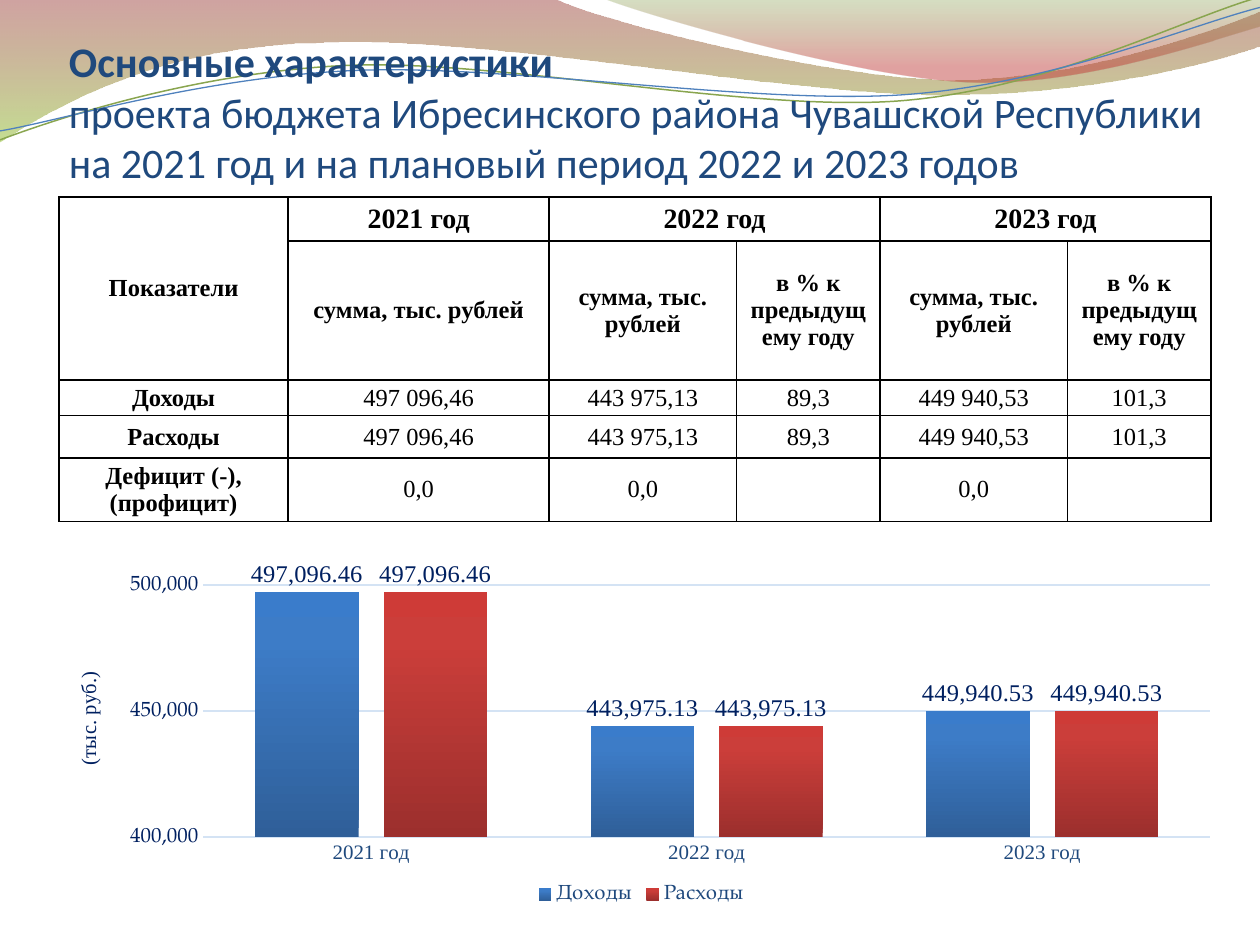
from dataclasses import dataclass

from lxml import etree
from pptx import Presentation
from pptx.chart.data import CategoryChartData
from pptx.dml.color import RGBColor
from pptx.enum.chart import XL_CHART_TYPE, XL_LABEL_POSITION, XL_LEGEND_POSITION, XL_TICK_MARK
from pptx.enum.text import MSO_ANCHOR, PP_ALIGN
from pptx.oxml import parse_xml
from pptx.oxml.ns import nsdecls, qn
from pptx.util import Cm, Pt

COLUMNS = XL_CHART_TYPE.COLUMN_CLUSTERED
LABELS_ABOVE = XL_LABEL_POSITION.OUTSIDE_END
LEGEND_BELOW = XL_LEGEND_POSITION.BOTTOM
NO_TICKS = XL_TICK_MARK.NONE
MIDDLE, BOTTOM = MSO_ANCHOR.MIDDLE, MSO_ANCHOR.BOTTOM
CENTER = PP_ALIGN.CENTER

SERIF, PAGELLA, SANS = "Times New Roman", "TeX Gyre Pagella", "Calibri"
BLUE, NAVY, BLACK, GRID = "1F497D", "002060", "000000", "D4E3F4"


@dataclass
class Gradient:
    """Stops are (position %, colour, opacity %); the angle runs clockwise."""
    stops: list[tuple[int, str, int]]
    angle: int


@dataclass
class Wave:
    """Steps of two numbers are straight lines, steps of six are Bezier curves, in cm."""
    start: tuple[float, float]
    steps: list[tuple[float, ...]]
    fill: Gradient | None = None
    line: tuple[str, float] | None = None
    rotation: float = 0


@dataclass
class Series:
    name: str
    values: list[float]
    fill: Gradient


WAVES = [
    Wave((0, -0.03), [(11.18, -0.03), (12.09, 0.43, 16.87, 1.6, 19.25, 1.6),
                      (21.67, 1.6, 24.33, 0.66, 25.4, 0.23), (25.43, 0.91),
                      (24.97, 1.12, 22.1, 1.93, 18.95, 1.91),
                      (15.8, 1.91, 9.7, 0.71, 6.53, 0.86),
                      (3.28, 0.89, 1.17, 2.11, -0.03, 2.87), (0, -0.03)],
         fill=Gradient([(0, "973330", 45), (100, "95C238", 55)], 90)),
    Wave((12.17, -0.03), [(12.93, 0.28, 17.32, 1.57, 19.53, 1.65),
                          (21.74, 1.75, 24.41, 0.81, 25.4, 0.53), (25.4, 0),
                          (12.17, -0.03)],
         fill=Gradient([(0, "769537", 30), (80, "BE3330", 45)], 90)),
    Wave((-0.05, 2.22), [(1.19, 1.82, 4.02, 1.04, 7.05, 1.05),
                         (10.05, 1.07, 15.02, 2.37, 18.08, 2.29),
                         (21.13, 2.2, 23.87, 0.91, 25.41, 0.55)],
         line=("89A54F", 0.85), rotation=-2.7),
    Wave((-0.04, 2.04), [(1.16, 1.9, 4.1, 1.14, 7.2, 1.16),
                         (10.25, 1.18, 15.13, 2.23, 18.18, 2.17),
                         (21.21, 2.1, 23.93, 1.06, 25.45, 0.75)],
         line=("4F81BD", 0.75), rotation=-2.7),
]

YEARS = ["2021 год", "2022 год", "2023 год"]
AMOUNT, SHARE = "сумма, тыс. рублей", "в % к предыдущему году"
FIGURES = ["497 096,46", "443 975,13", "89,3", "449 940,53", "101,3"]
ROWS = [
    ["Показатели", YEARS[0], YEARS[1], "", YEARS[2], ""],
    ["", AMOUNT, AMOUNT, SHARE, AMOUNT, SHARE],
    ["Доходы", *FIGURES],
    ["Расходы", *FIGURES],
    ["Дефицит (-), (профицит)", "0,0", "0,0", "", "0,0", ""],
]
COLUMN_WIDTHS = [4.62, 5.26, 3.78, 2.89, 3.78, 2.89]
ROW_HEIGHTS = [0.89, 2.8, 0.72, 0.85, 1.28]
MERGES = [((0, 0), (1, 0)), ((0, 2), (0, 3)), ((0, 4), (0, 5))]

TOTALS = [497096.46, 443975.13, 449940.53]
SERIES = [
    Series("Доходы", TOTALS, Gradient(
        [(0, "2F5F99", 100), (80, "3D7CC7", 100), (100, "3A7CCB", 100)], 270)),
    Series("Расходы", TOTALS, Gradient(
        [(0, "9C2F2D", 100), (80, "CB3E3A", 100), (100, "CE3B37", 100)], 270)),
]


def color(value: str) -> RGBColor:
    return RGBColor.from_string(value)


def set_font(font, name: str, size: float, value: str, bold: bool = False) -> None:
    font.name, font.size, font.bold = name, Pt(size), bold
    font.color.rgb = color(value)


def set_line(line, value: str, width: float) -> None:
    line.color.rgb = color(value)
    line.width = Pt(width)


def set_gradient(fill, element, gradient: Gradient) -> None:
    """Replace the default stops, which cannot be added or made translucent publicly."""
    fill.gradient()
    node = element.find(".//" + qn("a:gradFill"))
    for child in list(node):
        node.remove(child)
    stops = etree.SubElement(node, qn("a:gsLst"))
    for position, value, opacity in gradient.stops:
        stop = etree.SubElement(stops, qn("a:gs"), pos=str(position * 1000))
        tint = etree.SubElement(stop, qn("a:srgbClr"), val=value)
        if opacity < 100:
            etree.SubElement(tint, qn("a:alpha"), val=str(opacity * 1000))
    etree.SubElement(node, qn("a:lin"), ang=str(gradient.angle * 60000), scaled="0")


def bend_segments(shape, wave: Wave) -> None:
    """Turn the straight segments of six-number steps into Bezier curves."""
    segments = list(shape._element.iter(qn("a:lnTo")))
    for segment, step in zip(segments, wave.steps):
        if len(step) == 2:
            continue
        curve = etree.Element(qn("a:cubicBezTo"))
        for x, y in (step[:2], step[2:4]):
            etree.SubElement(curve, qn("a:pt"), x=str(Cm(x) - shape.left),
                             y=str(Cm(y) - shape.top))
        curve.append(segment[0])
        segment.getparent().replace(segment, curve)


def draw_wave(page, wave: Wave) -> None:
    x, y = wave.start
    builder = page.shapes.build_freeform(Cm(x), Cm(y))
    ends = [(Cm(step[-2]), Cm(step[-1])) for step in wave.steps]
    builder.add_line_segments(ends, close=wave.fill is not None)
    shape = builder.convert_to_shape()
    bend_segments(shape, wave)
    shape.rotation = wave.rotation
    shape.shadow.inherit = False
    if wave.fill:
        set_gradient(shape.fill, shape._element, wave.fill)
    else:
        shape.fill.background()
    if wave.line:
        set_line(shape.line, *wave.line)
    else:
        shape.line.fill.background()


def draw_title(page) -> None:
    box = page.shapes.add_textbox(Cm(1.39), Cm(0.59), Cm(22.86), Cm(3.18))
    frame = box.text_frame
    frame.word_wrap, frame.vertical_anchor = True, BOTTOM
    frame.margin_left = frame.margin_right = frame.margin_bottom = 0
    para = frame.paragraphs[0]
    set_font(para.font, SANS, 24, BLUE)
    heading = para.add_run()
    heading.text = "Основные характеристики"
    heading.font.bold = True
    para.add_line_break()
    para.add_run().text = ("проекта бюджета Ибресинского района Чувашской Республики "
                           "на 2021 год и на плановый период 2022 и 2023 годов")


def set_borders(cell) -> None:
    properties = cell._tc.get_or_add_tcPr()
    for index, side in enumerate(("lnL", "lnR", "lnT", "lnB")):
        properties.insert(index, parse_xml(
            f'<a:{side} {nsdecls("a")} w="12700"><a:solidFill>'
            f'<a:srgbClr val="{BLACK}"/></a:solidFill></a:{side}>'))


def draw_table(page) -> None:
    table = page.shapes.add_table(len(ROWS), len(COLUMN_WIDTHS), Cm(1.19), Cm(3.97),
                                  Cm(sum(COLUMN_WIDTHS)), Cm(sum(ROW_HEIGHTS))).table
    table.first_row = table.horz_banding = False
    for column, width in zip(table.columns, COLUMN_WIDTHS):
        column.width = Cm(width)
    for row, height in zip(table.rows, ROW_HEIGHTS):
        row.height = Cm(height)
    for first, last in MERGES:
        table.cell(*first).merge(table.cell(*last))
    for i, texts in enumerate(ROWS):
        for j, text in enumerate(texts):
            cell = table.cell(i, j)
            cell.fill.background()
            set_borders(cell)
            cell.vertical_anchor = MIDDLE
            cell.margin_left = cell.margin_right = Cm(0.18)
            cell.margin_top = cell.margin_bottom = 0
            cell.text = text
            para = cell.text_frame.paragraphs[0]
            para.alignment = CENTER
            set_font(para.font, SERIF, 16 if i == 0 and j else 14, BLACK, i < 2 or j == 0)


def draw_chart(page) -> None:
    data = CategoryChartData()
    data.categories = YEARS
    for series in SERIES:
        data.add_series(series.name, series.values)
    chart = page.shapes.add_chart(COLUMNS, Cm(0.99), Cm(11.3), Cm(23.88), Cm(7.04), data).chart
    set_font(chart.font, PAGELLA, 10, BLACK)
    chart.has_title = False
    chart.has_legend = True
    chart.legend.position, chart.legend.include_in_layout = LEGEND_BELOW, False
    set_font(chart.legend.font, PAGELLA, 12, BLUE)

    years, amounts = chart.category_axis, chart.value_axis
    years.major_tick_mark = amounts.major_tick_mark = NO_TICKS
    set_font(years.tick_labels.font, SERIF, 12, BLUE)
    set_line(years.format.line, GRID, 0.75)
    set_font(amounts.tick_labels.font, PAGELLA, 12, NAVY)
    amounts.tick_labels.number_format = "#,##0"
    amounts.tick_labels.number_format_is_linked = False
    amounts.minimum_scale, amounts.maximum_scale, amounts.major_unit = 400000, 500000, 50000
    amounts.format.line.fill.background()
    set_line(amounts.major_gridlines.format.line, GRID, 0.75)
    caption = amounts.axis_title.text_frame
    caption.text = "(тыс. руб.)"
    set_font(caption.paragraphs[0].font, SERIF, 12, NAVY)

    plot = chart.plots[0]
    plot.gap_width, plot.overlap, plot.vary_by_categories = 100, -24, False
    for bars, series in zip(plot.series, SERIES):
        set_gradient(bars.format.fill, bars._element, series.fill)
        labels = bars.data_labels
        labels.show_value, labels.position = True, LABELS_ABOVE
        labels.number_format, labels.number_format_is_linked = "#,##0.00", False
        set_font(labels.font, SERIF, 14, NAVY)


def main() -> None:
    deck = Presentation()
    deck.slide_width, deck.slide_height = Cm(25.4), Cm(19.05)
    page = deck.slides.add_slide(deck.slide_layouts[6])
    for wave in WAVES:
        draw_wave(page, wave)
    draw_title(page)
    draw_table(page)
    draw_chart(page)
    deck.save("out.pptx")


if __name__ == "__main__":
    main()
